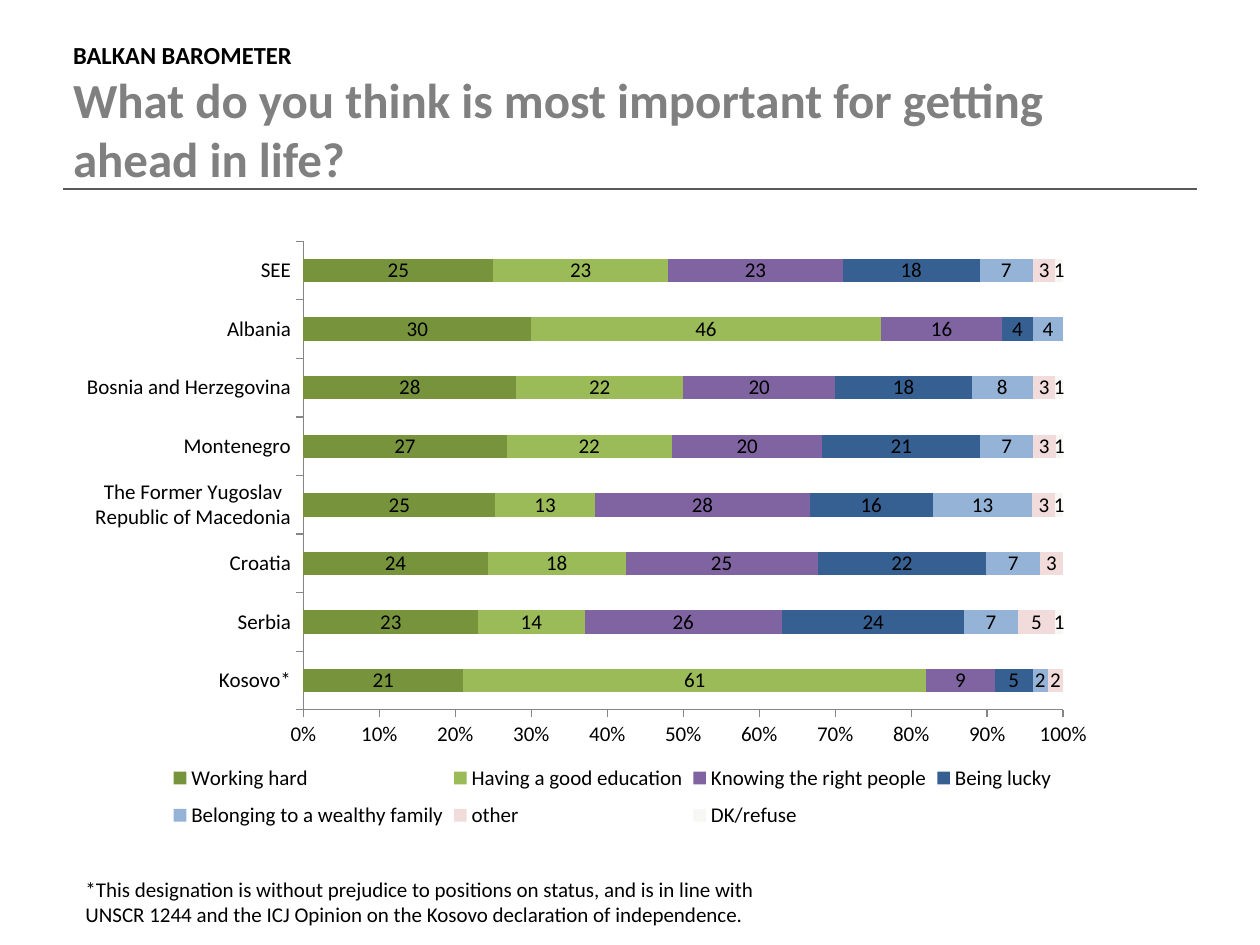
from dataclasses import dataclass

from lxml.etree import SubElement
from pptx import Presentation
from pptx.chart.data import CategoryChartData
from pptx.dml.color import RGBColor
from pptx.enum.chart import XL_CHART_TYPE as ChartType
from pptx.enum.chart import XL_LABEL_POSITION as LabelPosition
from pptx.enum.chart import XL_LEGEND_POSITION as LegendPosition
from pptx.enum.chart import XL_TICK_MARK as TickMark
from pptx.enum.shapes import MSO_CONNECTOR as Connector
from pptx.enum.text import MSO_ANCHOR as Anchor
from pptx.oxml import parse_xml
from pptx.oxml.ns import nsdecls, qn
from pptx.util import Inches, Pt

WIDTH, HEIGHT = Inches(10), Inches(7.5)
FONT = "Calibri"
BLACK = RGBColor(0x00, 0x00, 0x00)
TITLE_GREY = RGBColor(0x80, 0x80, 0x80)
RULE_GREY = RGBColor(0x59, 0x59, 0x59)
AXIS_GREY = RGBColor(0x86, 0x86, 0x86)
DARK_GREEN = RGBColor(0x77, 0x93, 0x3C)
GREEN = RGBColor(0x9B, 0xBB, 0x59)
PURPLE = RGBColor(0x80, 0x64, 0xA2)
DARK_BLUE = RGBColor(0x37, 0x60, 0x92)
LIGHT_BLUE = RGBColor(0x95, 0xB3, 0xD7)
PINK = RGBColor(0xF2, 0xDC, 0xDB)
IVORY = RGBColor(0xF8, 0xF7, 0xF3)


@dataclass(frozen=True)
class Area:
    left: float
    top: float
    width: float
    height: float

    def on_page(self) -> tuple[int, ...]:
        return (int(self.left * WIDTH), int(self.top * HEIGHT),
                int(self.width * WIDTH), int(self.height * HEIGHT))


@dataclass(frozen=True)
class Answer:
    name: str
    color: RGBColor
    shares: tuple[int | None, ...]


@dataclass(frozen=True)
class Line:
    text: str
    size: int
    color: RGBColor = BLACK
    bold: bool = False


COUNTRIES = ("Kosovo*", "Serbia", "Croatia",
             "The Former Yugoslav Republic of Macedonia", "Montenegro",
             "Bosnia and Herzegovina", "Albania", "SEE")
ANSWERS = (
    Answer("Working hard ", DARK_GREEN, (21, 23, 24, 25, 27, 28, 30, 25)),
    Answer("Having a good education", GREEN, (61, 14, 18, 13, 22, 22, 46, 23)),
    Answer("Knowing the right people", PURPLE, (9, 26, 25, 28, 20, 20, 16, 23)),
    Answer("Being lucky", DARK_BLUE, (5, 24, 22, 16, 21, 18, 4, 18)),
    Answer("Belonging to a wealthy family", LIGHT_BLUE, (2, 7, 7, 13, 7, 8, 4, 7)),
    Answer("other", PINK, (2, 5, 3, 3, 3, 3, None, 3)),
    Answer("DK/refuse", IVORY, (None, 1, None, 1, 1, 1, None, 1)),
)
HEADING = (
    Line("BALKAN BAROMETER", 14, bold=True),
    Line("What do you think is most important for getting ahead in life?",
         28, TITLE_GREY, True),
)
FOOTNOTE = (
    Line("*This designation is without prejudice to positions on status, and is in "
         "line with UNSCR 1244 and the ICJ Opinion on the Kosovo declaration of "
         "independence.", 12),
)


def set_all(target: object, values: dict[str, object]) -> None:
    for name, value in values.items():
        setattr(target, name, value)


def set_font(font, size: int, color: RGBColor, bold: bool = False) -> None:
    set_all(font, {"name": FONT, "size": Pt(size), "bold": bold})
    font.color.rgb = color


def add_text(page, area: Area, lines: tuple[Line, ...],
             frame_format: dict[str, object]) -> None:
    frame = page.shapes.add_textbox(*area.on_page()).text_frame
    set_all(frame, {"word_wrap": True, **frame_format})
    for index, line in enumerate(lines):
        para = frame.paragraphs[0] if index == 0 else frame.add_paragraph()
        span = para.add_run()
        span.text = line.text
        set_font(span.font, line.size, line.color, line.bold)


def add_rule(page) -> None:
    left, right, level = int(0.05 * WIDTH), int(0.95 * WIDTH), int(0.2 * HEIGHT)
    rule = page.shapes.add_connector(Connector.STRAIGHT, left, level, right, level)
    rule.line.color.rgb = RULE_GREY
    rule.line.width = Pt(1)
    SubElement(rule._element.spPr, qn("a:effectLst"))


def place(element, index: int, area: Area, inner: bool = False) -> None:
    for old in element.findall(qn("c:layout")):
        element.remove(old)
    target = '<c:layoutTarget val="inner"/>' if inner else ""
    element.insert(index, parse_xml(
        f'<c:layout {nsdecls("c")}><c:manualLayout>{target}'
        '<c:xMode val="edge"/><c:yMode val="edge"/>'
        f'<c:x val="{area.left}"/><c:y val="{area.top}"/>'
        f'<c:w val="{area.width}"/><c:h val="{area.height}"/>'
        '</c:manualLayout></c:layout>'))


def add_answers_chart(page, area: Area) -> None:
    data = CategoryChartData(number_format="#,##0")
    data.categories = COUNTRIES
    for answer in ANSWERS:
        data.add_series(answer.name, answer.shares)
    chart = page.shapes.add_chart(
        ChartType.BAR_STACKED_100, *area.on_page(), data).chart
    set_all(chart, {"has_title": False, "has_legend": True})
    set_font(chart.font, 12, BLACK)
    set_all(chart.legend, {"position": LegendPosition.RIGHT,
                           "include_in_layout": False})
    for axis in (chart.category_axis, chart.value_axis):
        set_all(axis, {"has_major_gridlines": False,
                       "major_tick_mark": TickMark.OUTSIDE,
                       "minor_tick_mark": TickMark.NONE})
        axis.format.line.color.rgb = AXIS_GREY
    set_all(chart.value_axis, {"minimum_scale": 0, "maximum_scale": 1,
                               "major_unit": 0.1})
    set_all(chart.value_axis.tick_labels, {"number_format": "0%",
                                           "number_format_is_linked": False})
    plot = chart.plots[0]
    set_all(plot, {"gap_width": 150, "overlap": 100, "vary_by_categories": False})
    for series, answer in zip(plot.series, ANSWERS):
        series.format.fill.solid()
        series.format.fill.fore_color.rgb = answer.color
        set_all(series.data_labels, {"show_value": True, "number_format": "#,##0",
                                     "number_format_is_linked": False,
                                     "position": LabelPosition.CENTER})
    place(chart._chartSpace.chart.plotArea, 0,
          Area(0.205, 0.034, 0.676, 0.756), inner=True)
    place(chart.legend._element, 1, Area(0.08, 0.86, 0.8, 0.15))


def main() -> None:
    deck = Presentation()
    set_all(deck, {"slide_width": WIDTH, "slide_height": HEIGHT})
    page = deck.slides.add_slide(deck.slide_layouts[6])
    add_rule(page)
    add_answers_chart(page, Area(0.058, 0.233, 0.892, 0.656))
    margins = ("margin_left", "margin_top", "margin_right", "margin_bottom")
    add_text(page, Area(0.058, 0.052, 0.83, 0.137), HEADING,
             {"vertical_anchor": Anchor.MIDDLE, **dict.fromkeys(margins, 0)})
    add_text(page, Area(0.058, 0.921, 0.567, 0.067), FOOTNOTE, {})
    deck.save("out.pptx")


if __name__ == "__main__":
    main()
